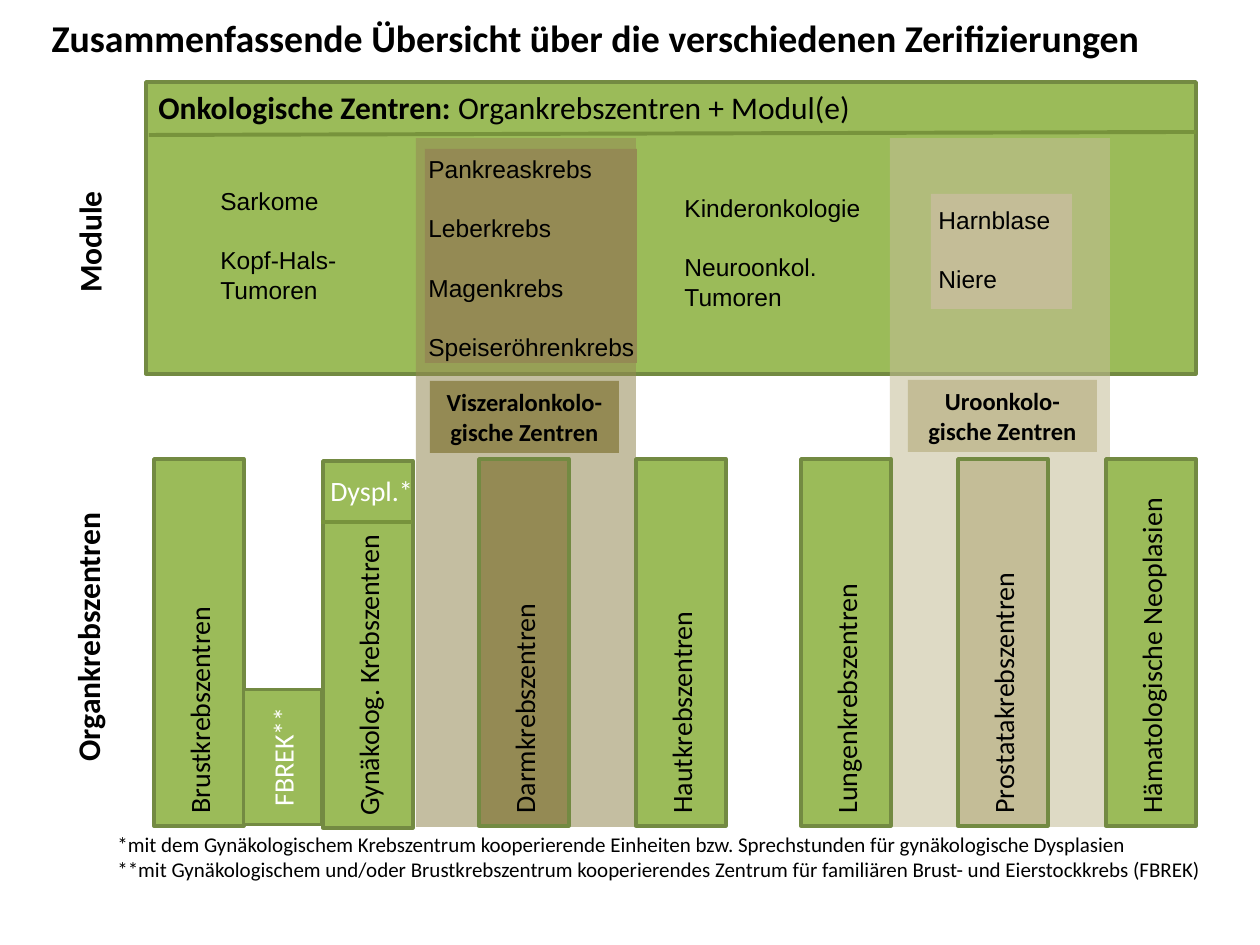
from lxml import etree
from pptx import Presentation
from pptx import util as u
from pptx.dml.color import RGBColor
from pptx.enum import shapes, text
from pptx.oxml.ns import qn

PX_PER_INCH = 126
GREEN, EDGE, RULE = "9BBB59", "738A42", "77933C"
VISCERAL, URO = "948A54", "C4BD97"
BLACK, WHITE = "000000", "FFFFFF"
LEFT, CENTER = text.PP_ALIGN.LEFT, text.PP_ALIGN.CENTER
TOP, MIDDLE = text.MSO_ANCHOR.TOP, text.MSO_ANCHOR.MIDDLE
COLUMN_TOP, COLUMN_WIDTH, COLUMN_HEIGHT = 459, 90, 367


def px(length):
    return u.Emu(round(length * 914400 / PX_PER_INCH))


def rgb(color):
    return RGBColor.from_string(color)


def write(frame, lines, size, font="Calibri", color=BLACK, bold=False,
          align=LEFT, anchor=TOP, gap=0):
    frame.word_wrap = True
    frame.vertical_anchor = anchor
    for index, line in enumerate(lines):
        paragraph = frame.paragraphs[0] if index == 0 else frame.add_paragraph()
        paragraph.alignment = align
        if index and gap:
            paragraph.space_before = u.Pt(gap)
        paragraph.add_run().text = line
        paragraph.font.name = font
        paragraph.font.size = u.Pt(size)
        paragraph.font.bold = bold
        paragraph.font.color.rgb = rgb(color)


def add_box(slide, left, top, width, height, fill, edge=None, alpha=None):
    box = slide.shapes.add_shape(shapes.MSO_SHAPE.RECTANGLE,
                                 px(left), px(top), px(width), px(height))
    box.shadow.inherit = False
    box.fill.solid()
    box.fill.fore_color.rgb = rgb(fill)
    if edge:
        box.line.color.rgb = rgb(edge)
        box.line.width = u.Pt(2)
    else:
        box.line.fill.background()
    if alpha:
        tint = box._element.spPr.find(qn("a:solidFill")).find(qn("a:srgbClr"))
        etree.SubElement(tint, qn("a:alpha")).set("val", str(alpha * 1000))
    return box


def add_label(slide, left, top, width, height, lines, size, rotation=0, **style):
    label = slide.shapes.add_textbox(px(left), px(top), px(width), px(height))
    label.rotation = rotation
    write(label.text_frame, lines, size, **style)
    return label


def add_modules(slide, left, top, width, height, modules):
    add_label(slide, left, top, width, height, modules, 14, font="Arial", gap=17)


def add_column(slide, left, name, fill=GREEN, top=COLUMN_TOP):
    column = add_box(slide, left, top, COLUMN_WIDTH, COLUMN_HEIGHT, fill, EDGE)
    write(column.text_frame, [name], 16, anchor=MIDDLE)
    column._element.txBody.bodyPr.set("vert", "vert270")


def add_centre(slide, left, top, name, fill):
    centre = add_box(slide, left, top, 189, 72, fill)
    write(centre.text_frame, [name], 14, bold=True, align=CENTER)


def add_rule(slide, x1, y1, x2, y2):
    rule = slide.shapes.add_connector(shapes.MSO_CONNECTOR.STRAIGHT,
                                      px(x1), px(y1), px(x2), px(y2))
    rule.line.color.rgb = rgb(RULE)
    rule.line.width = u.Pt(2.25)
    etree.SubElement(rule._element.spPr, qn("a:effectLst"))


def add_title(slide, name):
    title = slide.shapes.title
    title.left, title.top, title.width, title.height = map(px, (39, -8, 1181, 74))
    write(title.text_frame, [name], 21.6, bold=True, anchor=text.MSO_ANCHOR.BOTTOM)


def main():
    deck = Presentation()
    deck.slide_width, deck.slide_height = px(1260), px(945)
    slide = deck.slides.add_slide(deck.slide_layouts[5])

    add_box(slide, 146, 82, 1050, 292, GREEN, EDGE)
    add_box(slide, 416, 138, 220, 689, VISCERAL, alpha=55)
    add_box(slide, 890, 138, 220, 689, URO, alpha=55)
    add_title(slide, "Zusammenfassende Übersicht über die verschiedenen Zerifizierungen")

    add_column(slide, 154, "Brustkrebszentren")
    add_column(slide, 323, "Gynäkolog. Krebszentren", top=461)
    add_column(slide, 479, "Darmkrebszentren", VISCERAL)
    add_column(slide, 636, "Hautkrebszentren")
    add_column(slide, 801, "Lungenkrebszentren")
    add_column(slide, 958, "Prostatakrebszentren", URO)
    add_column(slide, 1106, "Hämatologische Neoplasien")

    heading = add_label(slide, 146, 82, 891, 50, ["Onkologische Zentren: "], 18, bold=True)
    scope = heading.text_frame.paragraphs[0].add_run()
    scope.text = "Organkrebszentren + Modul(e)"
    scope.font.bold = False

    add_box(slide, 425, 149, 212, 214, VISCERAL)
    add_box(slide, 931, 194, 141, 115, URO)
    add_modules(slide, 208, 180, 188, 131, ["Sarkome", "Kopf-Hals-Tumoren"])
    add_modules(slide, 416, 148, 239, 220,
                ["Pankreaskrebs", "Leberkrebs", "Magenkrebs", "Speiseröhrenkrebs"])
    add_modules(slide, 672, 187, 244, 131, ["Kinderonkologie", "Neuroonkol. Tumoren"])
    add_modules(slide, 926, 199, 181, 102, ["Harnblase", "Niere"])

    side = dict(rotation=270, bold=True, align=CENTER, anchor=MIDDLE)
    add_label(slide, -89, 595, 353, 84, ["Organkrebszentren"], 18, **side)
    add_label(slide, 14, 209, 150, 66, ["Module"], 18, **side)

    add_centre(slide, 430, 381, "Viszeralonkolo-gische Zentren", VISCERAL)
    add_centre(slide, 908, 380, "Uroonkolo-gische Zentren", URO)

    add_rule(slide, 321, 522, 412, 522)
    add_label(slide, 318, 467, 112, 47, ["Dyspl.*"], 16, color=WHITE)
    add_label(slide, 105, 825, 1121, 63, [
        "*mit dem Gynäkologischem Krebszentrum kooperierende Einheiten bzw. "
        "Sprechstunden für gynäkologische Dysplasien",
        "**mit Gynäkologischem und/oder Brustkrebszentrum kooperierendes Zentrum "
        "für familiären Brust- und Eierstockkrebs (FBREK)"], 12)

    family = add_box(slide, 215, 718, 135, 78, GREEN, EDGE)
    family.rotation = 270
    write(family.text_frame, ["FBREK**"], 16, color=WHITE, align=CENTER, anchor=MIDDLE)
    add_rule(slide, 149, 135, 1196, 132)

    deck.save("out.pptx")


if __name__ == "__main__":
    main()
